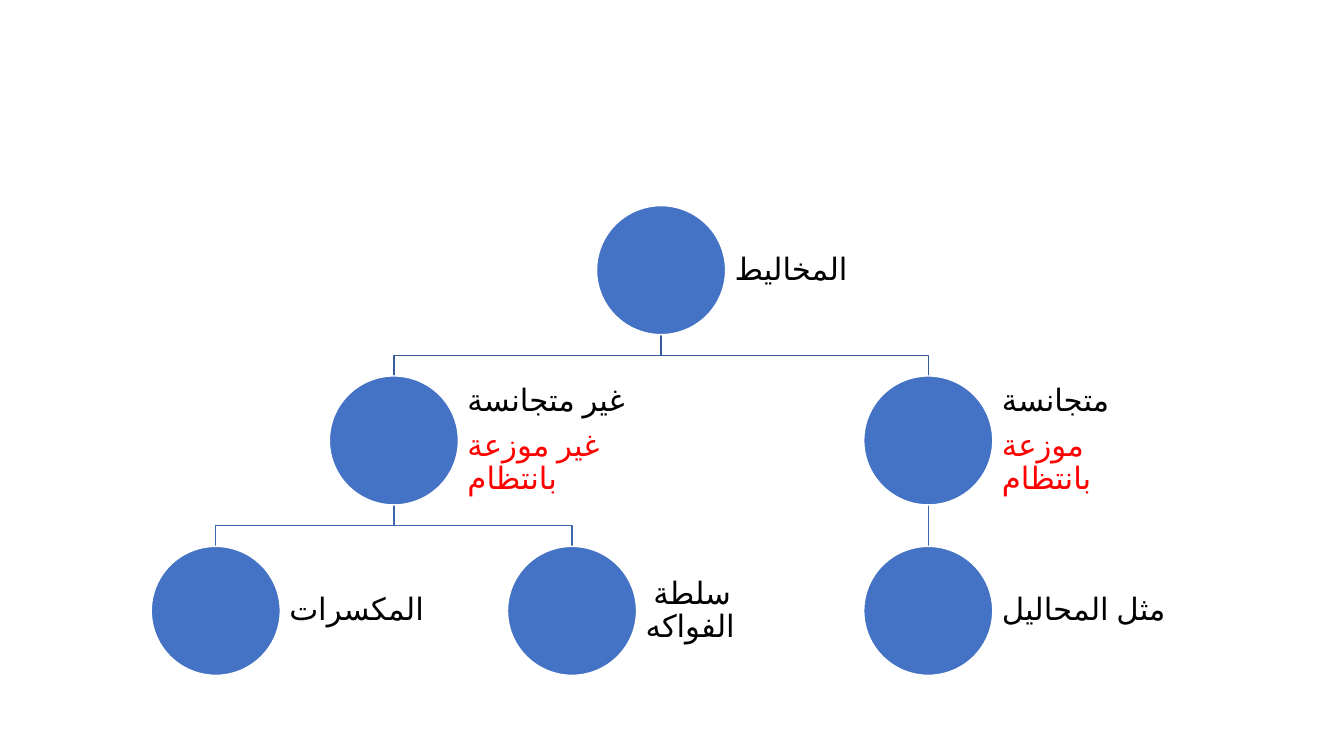
from dataclasses import dataclass

from lxml.etree import SubElement
from pptx import Presentation
from pptx.dml.color import RGBColor
from pptx.enum.lang import MSO_LANGUAGE_ID as Language
from pptx.enum.shapes import MSO_CONNECTOR as Connector, MSO_SHAPE as Shape
from pptx.enum.text import MSO_ANCHOR as Anchor, PP_ALIGN as Align
from pptx.oxml.ns import qn
from pptx.util import Inches, Pt

BLANK_LAYOUT = 6
LEFT, TOP = 1.5, 2.04
COLUMN, ROW = 5.3 / 3, 1.69
CIRCLE, LABEL = 1.28, 1.93
FONT, ARABIC_FONT = "Calibri", "+mn-cs"
LABEL_COLOURS = ("000000", "FF0000")
LINK_COLOURS = ("365B9D", "3E67B2")


@dataclass
class Node:
    """One circle of the tree, at a column and row of the grid."""
    column: float
    row: int
    lines: tuple
    children: tuple = ()

    @property
    def left(self):
        return LEFT + self.column * COLUMN

    @property
    def top(self):
        return TOP + self.row * ROW

    @property
    def middle(self):
        return self.left + CIRCLE / 2


MIXTURES = Node(2.5, 0, ("المخاليط",), (
    Node(4, 1, ("متجانسة", "موزعة بانتظام"), (
        Node(4, 2, ("مثل المحاليل",)),
    )),
    Node(1, 1, ("غير متجانسة", "غير موزعة بانتظام"), (
        Node(2, 2, ("سلطة  الفواكه",)),
        Node(0, 2, ("المكسرات",)),
    )),
))


def colour(value):
    """Turn a hex string into a colour."""
    return RGBColor.from_string(value)


def add_link(page, parent, child):
    """Draw the line from a parent's foot to a child's head."""
    start, end = parent.top + CIRCLE, child.top
    if parent.column == child.column:
        link = page.shapes.add_connector(
            Connector.STRAIGHT, Inches(parent.middle), Inches(start),
            Inches(child.middle), Inches(end))
        SubElement(link._element.spPr, qn("a:effectLst"))
    else:
        bend = (start + end) / 2
        corners = ((parent.middle, bend), (child.middle, bend), (child.middle, end))
        builder = page.shapes.build_freeform(Inches(parent.middle), Inches(start))
        builder.add_line_segments(
            [(Inches(x), Inches(y)) for x, y in corners], close=False)
        link = builder.convert_to_shape()
        link.fill.background()
        link.shadow.inherit = False
    link.line.color.rgb = colour(LINK_COLOURS[parent.row])
    link.line.width = Pt(1)


def add_circle(page, node):
    """Draw the node's circle."""
    circle = page.shapes.add_shape(
        Shape.OVAL, Inches(node.left), Inches(node.top), Inches(CIRCLE), Inches(CIRCLE))
    circle.shadow.inherit = False
    circle.fill.solid()
    circle.fill.fore_color.rgb = colour("4472C4")
    circle.line.color.rgb = colour("FFFFFF")
    circle.line.width = Pt(1)


def add_label(page, node):
    """Write the node's right-to-left lines beside its circle."""
    box = page.shapes.add_textbox(
        Inches(node.left + CIRCLE), Inches(node.top), Inches(LABEL), Inches(CIRCLE))
    frame = box.text_frame
    frame.word_wrap = True
    frame.vertical_anchor = Anchor.MIDDLE
    frame.margin_left = frame.margin_right = Inches(0.09)
    frame.margin_top = frame.margin_bottom = Inches(0.09)
    frame.text = "\n".join(node.lines)
    for para, text_colour in zip(frame.paragraphs, LABEL_COLOURS):
        para.alignment = Align.LEFT
        para.line_spacing = 0.9
        para.space_after = Pt(8.5)
        para._p.get_or_add_pPr().set("rtl", "1")
        for span in para.runs:
            span.font.size = Pt(22)
            span.font.name = FONT
            span.font.language_id = Language.ARABIC
            span.font.color.rgb = colour(text_colour)
            SubElement(span.font._element, qn("a:cs"), typeface=ARABIC_FONT)


def add_links(page, node):
    """Draw all links below a node."""
    for child in node.children:
        add_links(page, child)
        add_link(page, node, child)


def add_nodes(page, node):
    """Draw a node and all nodes below it."""
    add_circle(page, node)
    add_label(page, node)
    for child in node.children:
        add_nodes(page, child)


def main():
    """Build the deck with its tree slide."""
    deck = Presentation()
    deck.slide_width, deck.slide_height = Inches(13.33), Inches(7.5)
    page = deck.slides.add_slide(deck.slide_layouts[BLANK_LAYOUT])
    add_links(page, MIXTURES)
    add_nodes(page, MIXTURES)
    deck.save("out.pptx")


if __name__ == "__main__":
    main()
